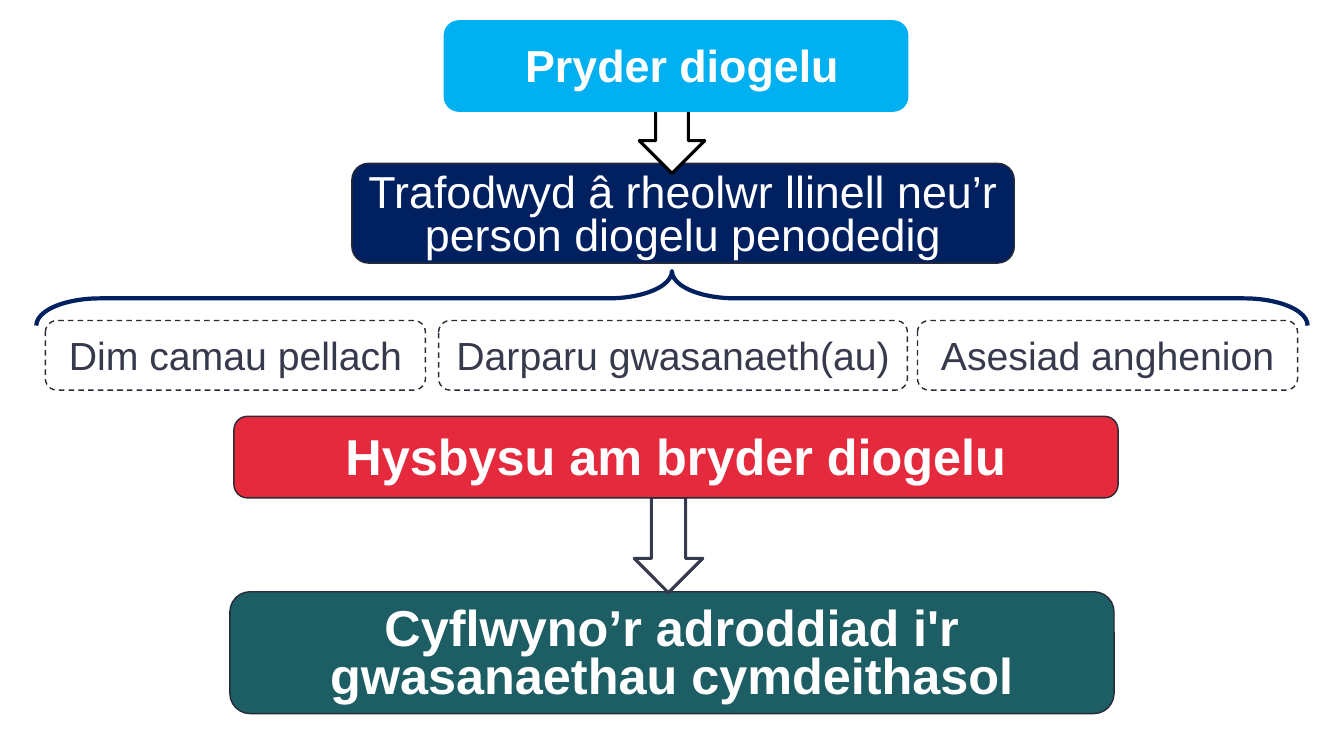
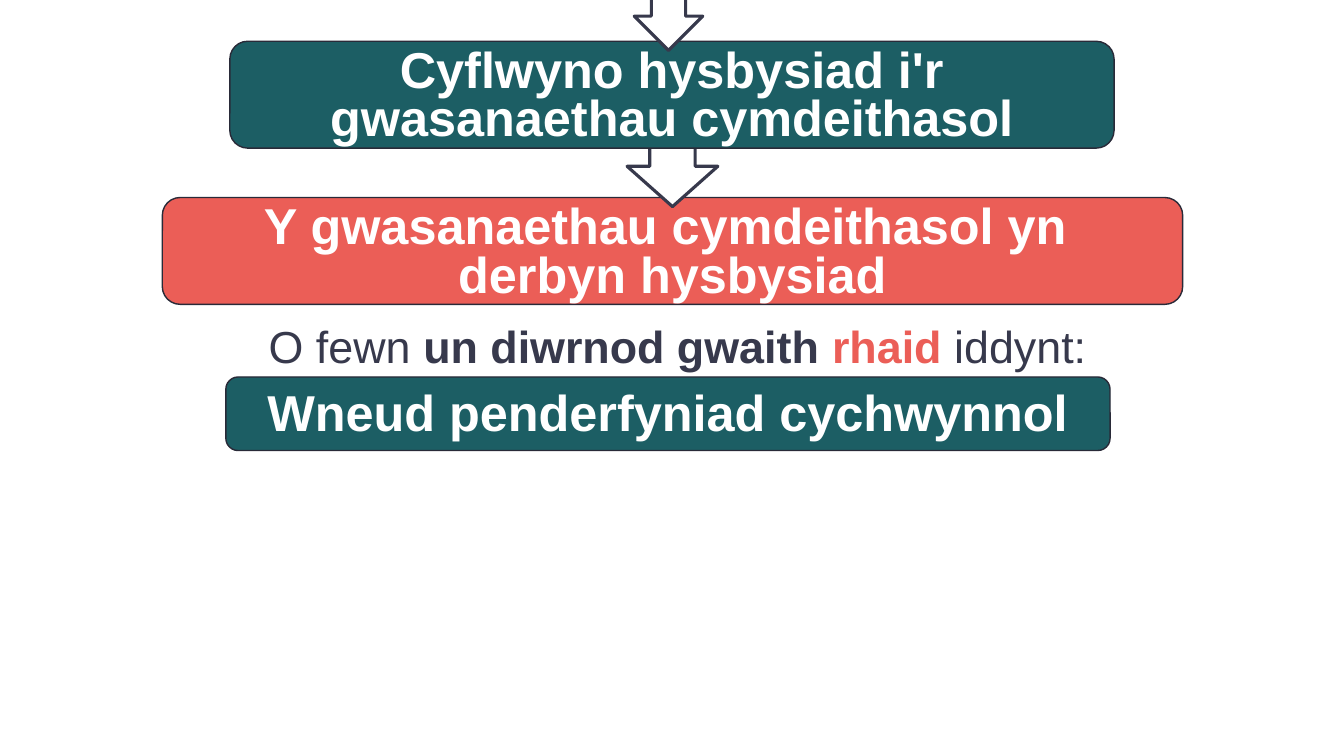
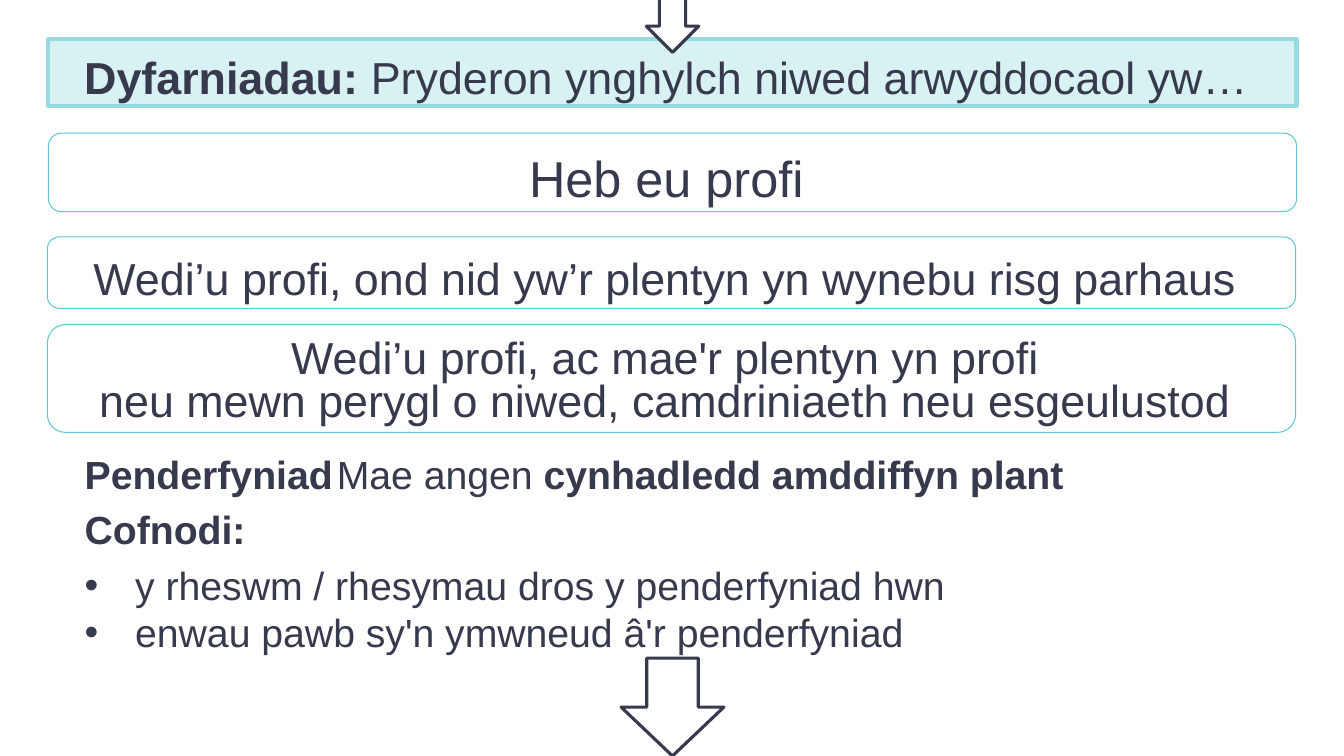
"""Build three Welsh safeguarding flowchart slides."""
from lxml import etree
from pptx import Presentation
from pptx.dml.color import RGBColor
from pptx.enum.dml import MSO_LINE
from pptx.enum.shapes import MSO_SHAPE
from pptx.enum.text import MSO_ANCHOR, MSO_AUTO_SIZE, PP_ALIGN
from pptx.oxml.ns import qn
from pptx.util import Inches, Pt

ROUNDED, DOWN_ARROW, RIGHT_BRACE = (
    MSO_SHAPE.ROUNDED_RECTANGLE, MSO_SHAPE.DOWN_ARROW, MSO_SHAPE.RIGHT_BRACE)
TOP, MIDDLE, BOTTOM = MSO_ANCHOR.TOP, MSO_ANCHOR.MIDDLE, MSO_ANCHOR.BOTTOM
LEFT, CENTER = PP_ALIGN.LEFT, PP_ALIGN.CENTER
DASH, NO_FIT = MSO_LINE.DASH, MSO_AUTO_SIZE.NONE

FONT = "Arial"
COLORS = {
    "white": "FFFFFF", "black": "000000", "ink": "37394C", "edge": "292A38",
    "teal": "1C5E64", "red": "E52A3D", "coral": "EB5E57", "navy": "002060",
    "sky": "00B0F0", "aqua": "60C8D3", "pale": "D8F2F4", "pale_edge": "95DBE2",
}
TITLE_LAYOUT, BLANK_LAYOUT = 1, 6
NODE_WIDTH = 8.77
ROW_WIDTH = 12.38
ROW_NUDGE = -0.12


def rgb(name):
    """Return the palette colour with this name."""
    return RGBColor.from_string(COLORS[name])


def place(shape, box):
    """Move a shape to a box of left, top, width and height in inches."""
    shape.left, shape.top, shape.width, shape.height = map(Inches, box)


def paint(shape, fill=None, line=None, weight=1.0, dash=None):
    """Set the fill and outline of a shape."""
    if fill:
        shape.fill.solid()
        shape.fill.fore_color.rgb = rgb(fill)
    else:
        shape.fill.background()
    if line:
        shape.line.color.rgb = rgb(line)
        shape.line.width = Pt(weight)
        if dash:
            shape.line.dash_style = dash
    else:
        shape.line.fill.background()


def set_frame(frame, anchor, nudge=0):
    """Set wrapping, anchor and insets; nudge shifts centred text sideways."""
    frame.word_wrap = True
    frame.auto_size = NO_FIT
    frame.vertical_anchor = anchor
    frame.margin_left = Inches(0.1 + max(nudge, 0))
    frame.margin_right = Inches(0.1 + max(-nudge, 0))
    frame.margin_top, frame.margin_bottom = Inches(0.1), Inches(0.03)


def write(paragraph, content, size, color="ink", bold=False, align=CENTER,
          spacing=1.0, after=0):
    """Write a string, or a list of (text, bold, colour) runs, in a paragraph."""
    paragraph.alignment = align
    paragraph.line_spacing = spacing
    paragraph.space_before, paragraph.space_after = Pt(0), Pt(after)
    font = paragraph.font
    font.name, font.size = FONT, Pt(size)
    font.bold, font.color.rgb = bold, rgb(color)
    if isinstance(content, str):
        paragraph.text = content
        return
    for text, run_bold, run_color in content:
        run = paragraph.add_run()
        run.text = text
        run.font.bold, run.font.color.rgb = run_bold, rgb(run_color)


def add_preset(slide, preset, box, **look):
    """Add a painted preset shape without a shadow."""
    shape = slide.shapes.add_shape(preset, *map(Inches, box))
    shape.shadow.inherit = False
    paint(shape, **look)
    return shape


def add_node(slide, box, text, fill, size=36, bold=True, color="white",
             line="edge", dash=None, nudge=0):
    """Add a rounded flowchart step with middle-anchored text."""
    node = add_preset(slide, ROUNDED, box, fill=fill, line=line, dash=dash)
    set_frame(node.text_frame, MIDDLE, nudge)
    write(node.text_frame.paragraphs[0], text, size, color, bold, spacing=0.8)


def add_arrow(slide, box, line="ink"):
    """Add a white block arrow pointing down."""
    add_preset(slide, DOWN_ARROW, box, fill="white", line=line, weight=2.25)


def add_judgement(slide, box, text, size=32, spacing=1.0):
    """Add one outlined row naming a possible judgement."""
    row = add_preset(slide, ROUNDED, box, fill="white", line="aqua", weight=0.75)
    set_frame(row.text_frame, TOP, ROW_NUDGE)
    write(row.text_frame.paragraphs[0], text, size, spacing=spacing)


def set_bullet(paragraph, bulleted):
    """Give a paragraph a hanging bullet, or remove the inherited one."""
    properties = paragraph._p.get_or_add_pPr()
    hang = Inches(0.5) if bulleted else 0
    properties.set("marL", str(hang))
    properties.set("indent", str(-hang))
    if bulleted:
        etree.SubElement(properties, qn("a:buChar")).set("char", "•")
    else:
        etree.SubElement(properties, qn("a:buNone"))


def fill_decision(body, box):
    """Fill the body placeholder with the decision and what to record."""
    place(body, box)
    frame = body.text_frame
    set_frame(frame, BOTTOM)
    decision = [("Penderfyniad\t", True, "ink"), ("Mae angen ", False, "ink"),
                ("cynhadledd amddiffyn plant", True, "ink")]
    entries = [
        (decision, False, True, 6),
        ("Cofnodi:", False, True, 6),
        ("y rheswm / rhesymau dros y penderfyniad hwn", True, False, 0),
        ("enwau pawb sy'n ymwneud â'r penderfyniad", True, False, 6),
    ]
    for index, (content, bulleted, bold, after) in enumerate(entries):
        paragraph = frame.add_paragraph() if index else frame.paragraphs[0]
        set_bullet(paragraph, bulleted)
        write(paragraph, content, 28, bold=bold, align=LEFT, after=after)


def add_outcomes(slide, box):
    """Add a brace over the three dashed outcomes of the discussion."""
    left, top, width, height = box
    depth = 0.54
    brace = add_preset(
        slide, RIGHT_BRACE,
        (left + (width - depth) / 2, top + (depth - width) / 2, depth, width),
        line="navy", weight=3)
    brace.rotation = 270
    brace.adjustments[0], brace.adjustments[1] = 1.17, 0.5
    outcomes = [(0.09, 3.77, "Dim camau pellach"),
                (3.99, 4.65, "Darparu gwasanaeth(au)"),
                (8.74, 3.77, "Asesiad anghenion")]
    node_height = 0.69
    for offset, node_width, text in outcomes:
        add_node(slide, (left + offset, top + height - node_height,
                         node_width, node_height),
                 text, "white", 28, False, "ink", dash=DASH)


def build_concern(deck):
    """Build the slide from first concern to report."""
    slide = deck.slides.add_slide(deck.slide_layouts[BLANK_LAYOUT])
    add_node(slide, (2.28, 5.87, NODE_WIDTH, 1.21),
             "Cyflwyno’r adroddiad i'r gwasanaethau cymdeithasol", "teal")
    add_arrow(slide, (6.29, 4.93, 0.68, 0.95))
    add_node(slide, (2.32, 4.13, NODE_WIDTH, 0.81),
             "Hysbysu am bryder diogelu", "red")
    add_node(slide, (3.49, 1.62, 6.57, 0.99),
             "Trafodwyd â rheolwr llinell neu’r person diogelu penodedig",
             "navy", 32, False)
    add_arrow(slide, (6.34, 1.03, 0.65, 0.69), "black")
    add_node(slide, (4.4, 0.2, 4.61, 0.91), "Pryder diogelu", "sky", 32,
             line=None, nudge=0.12)
    add_outcomes(slide, (0.36, 2.69, 12.61, 1.18))


def build_report(deck):
    """Build the slide from report to initial decision."""
    slide = deck.slides.add_slide(deck.slide_layouts[BLANK_LAYOUT])
    add_node(slide, (2.24, 3.74, NODE_WIDTH, 0.73),
             "Wneud penderfyniad cychwynnol", "teal")
    add_node(slide, (1.61, 1.96, 10.12, 1.06),
             "Y gwasanaethau cymdeithasol yn \vderbyn hysbysiad", "coral")
    add_arrow(slide, (6.22, 1.25, 0.9, 0.8))
    add_node(slide, (2.28, 0.41, NODE_WIDTH, 1.06),
             "Cyflwyno hysbysiad i'r gwasanaethau cymdeithasol", "teal")
    add_arrow(slide, (6.29, -0.31, 0.68, 0.81))
    deadline = slide.shapes.add_textbox(*map(Inches, (1.19, 3.12, 11.06, 0.59)))
    set_frame(deadline.text_frame, TOP)
    write(deadline.text_frame.paragraphs[0],
          [("O fewn ", False, "ink"), ("un diwrnod gwaith ", True, "ink"),
           ("rhaid ", True, "coral"), ("iddynt:", False, "ink")],
          32, spacing=0.9, after=6)


def build_judgements(deck):
    """Build the slide of judgements and the resulting decision."""
    slide = deck.slides.add_slide(deck.slide_layouts[TITLE_LAYOUT])
    title = slide.shapes.title
    place(title, (0.48, 0.39, ROW_WIDTH, 0.66))
    paint(title, "pale", "pale_edge", 3)
    set_frame(title.text_frame, TOP, ROW_NUDGE)
    write(title.text_frame.paragraphs[0],
          [("Dyfarniadau:", True, "ink"),
           (" Pryderon ynghylch niwed arwyddocaol yw…", False, "ink")], 32)
    fill_decision(slide.placeholders[1], (0.74, 4.27, ROW_WIDTH, 2.26))
    add_judgement(slide, (0.47, 3.22, ROW_WIDTH, 1.07),
                  "Wedi’u profi, ac mae'r plentyn yn profi\v"
                  "neu mewn perygl o niwed, camdriniaeth neu esgeulustod",
                  spacing=0.8)
    add_judgement(slide, (0.47, 2.35, ROW_WIDTH, 0.71),
                  "Wedi’u profi, ond nid yw’r plentyn yn wynebu risg parhaus")
    add_judgement(slide, (0.48, 1.32, ROW_WIDTH, 0.78), "Heb eu profi", 36)
    add_arrow(slide, (6.41, -0.19, 0.52, 0.71))
    add_arrow(slide, (6.16, 6.53, 1.02, 0.97))


def main():
    """Build and save the deck."""
    deck = Presentation()
    deck.slide_width, deck.slide_height = Inches(13.33), Inches(7.5)
    build_concern(deck)
    build_report(deck)
    build_judgements(deck)
    deck.save("out.pptx")


if __name__ == "__main__":
    main()
